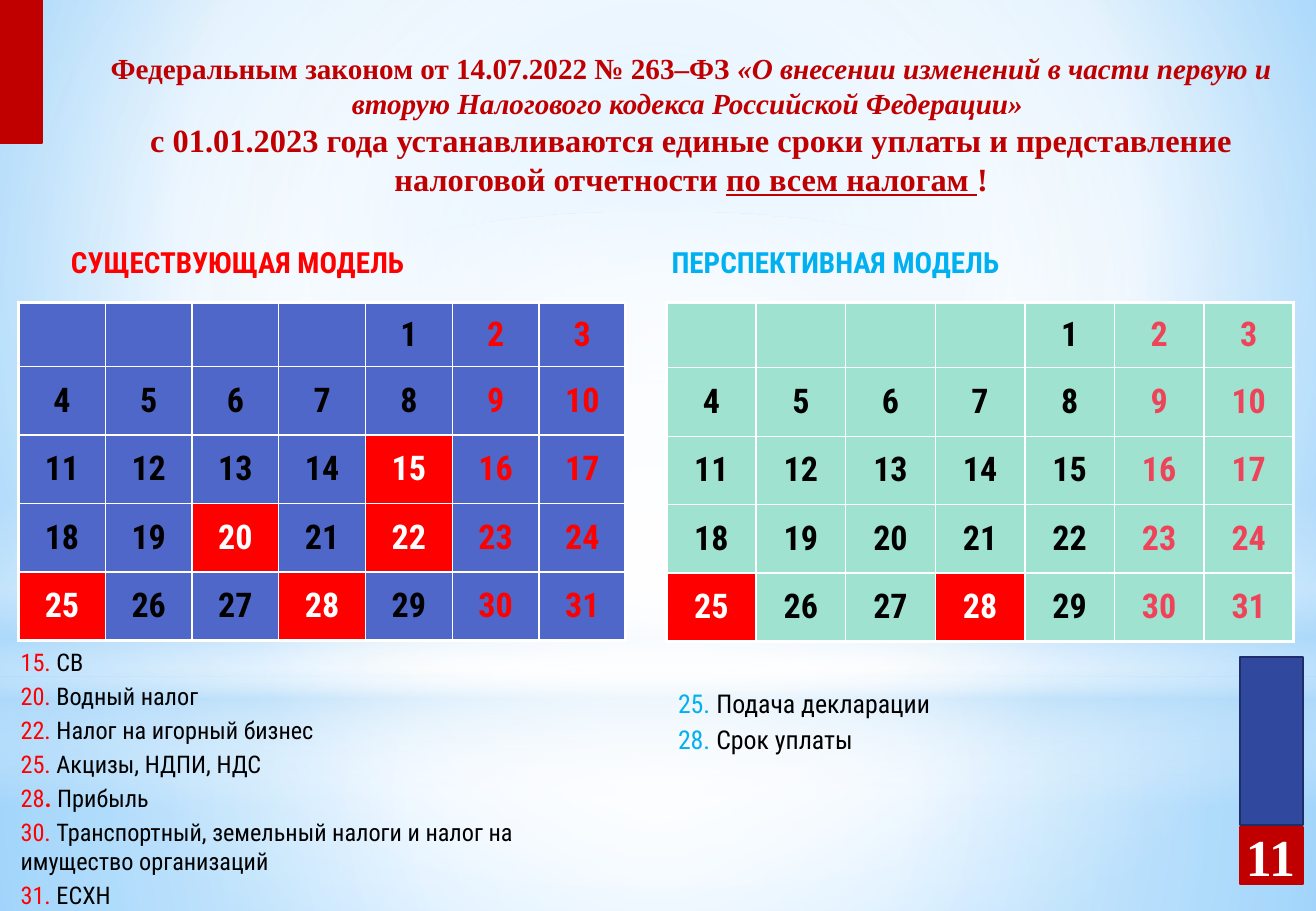
"""Build the tax calendar slide comparing the existing and the prospective payment model."""
from pptx import Presentation
from pptx.dml.color import RGBColor
from pptx.enum.shapes import MSO_SHAPE
from pptx.enum.text import MSO_ANCHOR, MSO_AUTO_SIZE, PP_ALIGN
from pptx.oxml import parse_xml
from pptx.oxml.ns import nsdecls, qn
from pptx.util import Pt

RECTANGLE, OVAL, ROUNDED = MSO_SHAPE.RECTANGLE, MSO_SHAPE.OVAL, MSO_SHAPE.ROUNDED_RECTANGLE
TOP, MIDDLE = MSO_ANCHOR.TOP, MSO_ANCHOR.MIDDLE
LEFT, CENTER = PP_ALIGN.LEFT, PP_ALIGN.CENTER
NO_FIT, GROW = MSO_AUTO_SIZE.NONE, MSO_AUTO_SIZE.SHAPE_TO_FIT_TEXT

WIDTH, HEIGHT = 813, 563
SERIF, SANS = "Times New Roman", "Roboto Condensed"
BLACK, WHITE, RED, DARK_RED, SKY = "000000", "FFFFFF", "FF0000", "C00000", "00B0F0"
PALE = "B4DCFA"
CIRCLE = '<a:path path="circle"><a:fillToRect l="{}000" t="{}000" r="{}000" b="{}000"/></a:path>'
CENTERED = CIRCLE.format(50, 50, 50, 50)
DOWNWARD = '<a:lin ang="5400000" scaled="0"/>'
DAYS_IN_WEEK, BLANK_DAYS, WEEKS, LAST_DAY = 7, 4, 5, 31
WEEK_HEIGHT = 42.3

TITLE = [
    [("Федеральным законом от 14.07.2022 № 263–ФЗ ", DARK_RED, {"size": Pt(18)}),
     ("«О внесении изменений в части первую и вторую Налогового кодекса Российской Федерации» ",
      DARK_RED, {"size": Pt(18), "italic": True})],
    [("с 01.01.2023 года устанавливаются единые сроки уплаты и представление "
      "налоговой отчетности ", DARK_RED, {"size": Pt(20)}),
     ("по всем налогам ", DARK_RED, {"size": Pt(20), "underline": True}),
     ("!", DARK_RED, {"size": Pt(20)})],
]
EXISTING_TAXES = {
    15: "СВ", 20: "Водный налог", 22: "Налог на игорный бизнес", 25: "Акцизы, НДПИ, НДС",
    28: "Прибыль", 30: "Транспортный, земельный налоги и налог на имущество организаций",
    31: "ЕСХН",
}
NEW_DEADLINES = {25: "Подача декларации", 28: "Срок уплаты"}


def paint(target, color):
    """Give a fill, line or font one solid colour from a hex string."""
    if hasattr(target, "solid"):
        target.solid()
        target = target.fore_color
    elif hasattr(target, "color"):
        target = target.color
    target.rgb = RGBColor.from_string(color)


def paint_gradient(fill, properties, stops, direction):
    """Replace a fill with a gradient of (position, colour, opacity) stops."""
    paint(fill, WHITE)
    marks = "".join(
        f'<a:gs pos="{position}000"><a:srgbClr val="{color}">'
        f'<a:alpha val="{opacity}000"/></a:srgbClr></a:gs>'
        for position, color, opacity in stops)
    gradient = parse_xml(f'<a:gradFill {nsdecls("a")} rotWithShape="1">'
                         f'<a:gsLst>{marks}</a:gsLst>{direction}</a:gradFill>')
    properties.replace(properties.find(qn("a:solidFill")), gradient)


def add_shape(page, kind, bounds):
    """Add a preset shape without shadow and outline."""
    shape = page.shapes.add_shape(kind, *map(Pt, bounds))
    shape.shadow.inherit = False
    shape.line.fill.background()
    return shape


def add_glow(page, kind, bounds, stops, direction=CENTERED):
    """Add a translucent gradient layer of the backdrop."""
    shape = add_shape(page, kind, bounds)
    paint_gradient(shape.fill, shape.element.spPr, stops, direction)


def add_block(page, bounds, color, outline):
    """Add a solid decorative rectangle."""
    shape = add_shape(page, RECTANGLE, bounds)
    paint(shape.fill, color)
    paint(shape.line, outline)
    shape.line.width = Pt(1.25)


def write_spans(para, spans, style):
    """Write (text, colour, formats) spans over a shared style."""
    for text, color, formats in spans:
        span = para.add_run()
        span.text = text
        for name, value in {**style, **formats}.items():
            setattr(span.font, name, value)
        paint(span.font, color)


def write_text(box, paragraphs, style, frame_formats, para_formats):
    """Fill a box with formatted paragraphs."""
    frame = box.text_frame
    for name, value in {"word_wrap": True, **frame_formats}.items():
        setattr(frame, name, value)
    for index, spans in enumerate(paragraphs):
        para = frame.add_paragraph() if index else frame.paragraphs[0]
        for name, value in para_formats.items():
            setattr(para, name, value)
        write_spans(para, spans, style)


def add_text(page, bounds, paragraphs, style, frame_formats, para_formats):
    """Add a text box with formatted paragraphs."""
    box = page.shapes.add_textbox(*map(Pt, bounds))
    write_text(box, paragraphs, style, frame_formats, para_formats)


def add_heading(page, left, text, color):
    """Add the heading of one model."""
    box = add_shape(page, ROUNDED, (left, 146.2, 296.6, 32.4))
    box.fill.background()
    write_text(box, [[(text, color, {})]], {"name": SANS, "size": Pt(18), "bold": True},
               {"vertical_anchor": TOP, "margin_left": 0, "auto_size": GROW},
               {"alignment": LEFT})


def add_notes(page, bounds, notes, color, size, bold_dots=()):
    """Add a list of days with what is due on each."""
    paragraphs = [
        [(str(day), color, {}), (". ", color, {"bold": day in bold_dots}), (text, BLACK, {})]
        for day, text in notes.items()]
    add_text(page, bounds, paragraphs, {"name": SANS, "size": Pt(size), "bold": False},
             {"auto_size": GROW}, {"space_after": Pt(3)})


def set_borders(cell, week, weekday):
    """Draw white cell borders, thicker on the outside of the calendar."""
    outer = {"L": weekday == 0, "R": weekday == DAYS_IN_WEEK - 1,
             "T": week == 0, "B": week == WEEKS - 1}
    properties = cell._tc.get_or_add_tcPr()
    for index, (side, thick) in enumerate(outer.items()):
        width = Pt(2.25 if thick else 1)
        properties.insert(index, parse_xml(
            f'<a:ln{side} {nsdecls("a")} w="{width}"><a:solidFill>'
            f'<a:srgbClr val="{WHITE}"/></a:solidFill></a:ln{side}>'))


def add_calendar(page, bounds, color, weekend_color, due_days):
    """Add a month table with highlighted due days."""
    table = page.shapes.add_table(WEEKS, DAYS_IN_WEEK, *map(Pt, bounds)).table
    table.first_row = table.horz_banding = False
    for column in table.columns:
        column.width = Pt(bounds[2] / DAYS_IN_WEEK)
    for week, row in enumerate(table.rows):
        row.height = Pt(WEEK_HEIGHT if week else bounds[3] - (WEEKS - 1) * WEEK_HEIGHT)
        for weekday, cell in enumerate(row.cells):
            day = week * DAYS_IN_WEEK + weekday - BLANK_DAYS + 1
            due = day in due_days
            paint(cell.fill, RED if due else color)
            set_borders(cell, week, weekday)
            cell.vertical_anchor = MIDDLE
            para = cell.text_frame.paragraphs[0]
            para.alignment = CENTER
            if 1 <= day <= LAST_DAY:
                ink = WHITE if due else weekend_color if weekday >= 5 else BLACK
                write_spans(para, [(str(day), ink, {})],
                            {"name": SANS, "size": Pt(21), "bold": True})


def add_backdrop(page):
    """Paint the background, its light layers and the corner blocks."""
    paint_gradient(page.background.fill, page.element.find(".//" + qn("p:bgPr")),
                   [(0, "9ED5FF", 100), (60, WHITE, 100), (100, "5BB9FF", 100)],
                   CIRCLE.format(20, 10, 20, 60))
    add_glow(page, RECTANGLE, (0, 419, WIDTH, 144),
             [(0, WHITE, 91), (37, WHITE, 76), (100, PALE, 79)])
    add_glow(page, RECTANGLE, (0, 0, WIDTH, 419),
             [(0, WHITE, 89), (48, WHITE, 62), (100, PALE, 79)])
    add_glow(page, RECTANGLE, (0, 309.6, WIDTH, 187.9),
             [(0, WHITE, 0), (29, WHITE, 30), (45, PALE, 40), (55, WHITE, 26),
              (65, PALE, 60), (100, WHITE, 0)], DOWNWARD)
    add_glow(page, OVAL, (0, 131, WIDTH, 419), [(0, WHITE, 100), (56, WHITE, 0)])
    add_block(page, (766, 406, 39, 103.7), "31489F", "1F2E69")
    add_block(page, (766, 511, 39, 35.3), DARK_RED, DARK_RED)
    add_block(page, (0, 0, 25.8, 88.5), DARK_RED, DARK_RED)


def main():
    """Build and save the slide."""
    deck = Presentation()
    deck.slide_width, deck.slide_height = Pt(WIDTH), Pt(HEIGHT)
    page = deck.slides.add_slide(deck.slide_layouts[6])
    add_backdrop(page)
    serif = {"name": SERIF, "bold": True}
    middle = {"vertical_anchor": MIDDLE, "auto_size": NO_FIT}
    add_text(page, (59.8, 31.7, 734.4, 90), TITLE, serif, middle, {"alignment": CENTER})
    add_text(page, (762.2, 501.6, 45.4, 54), [[("11", WHITE, {"size": Pt(32)})]], serif,
             {**middle, "word_wrap": False}, {"alignment": CENTER})
    add_heading(page, 42.3, "СУЩЕСТВУЮЩАЯ МОДЕЛЬ", RED)
    add_heading(page, 413.3, "ПЕРСПЕКТИВНАЯ МОДЕЛЬ", SKY)
    add_calendar(page, (11.5, 187, 375.2, 208.8), "4E67C8", RED, {15, 20, 22, 25, 28})
    add_calendar(page, (411.8, 187, 387.4, 209.5), "9EE2CF", "EF435A", {25, 28})
    add_notes(page, (5.6, 396.5, 387.4, 170.6), EXISTING_TAXES, RED, 15, bold_dots={28})
    add_notes(page, (411.8, 421.6, 387.4, 49), NEW_DEADLINES, SKY, 16)
    deck.save("out.pptx")


if __name__ == "__main__":
    main()
